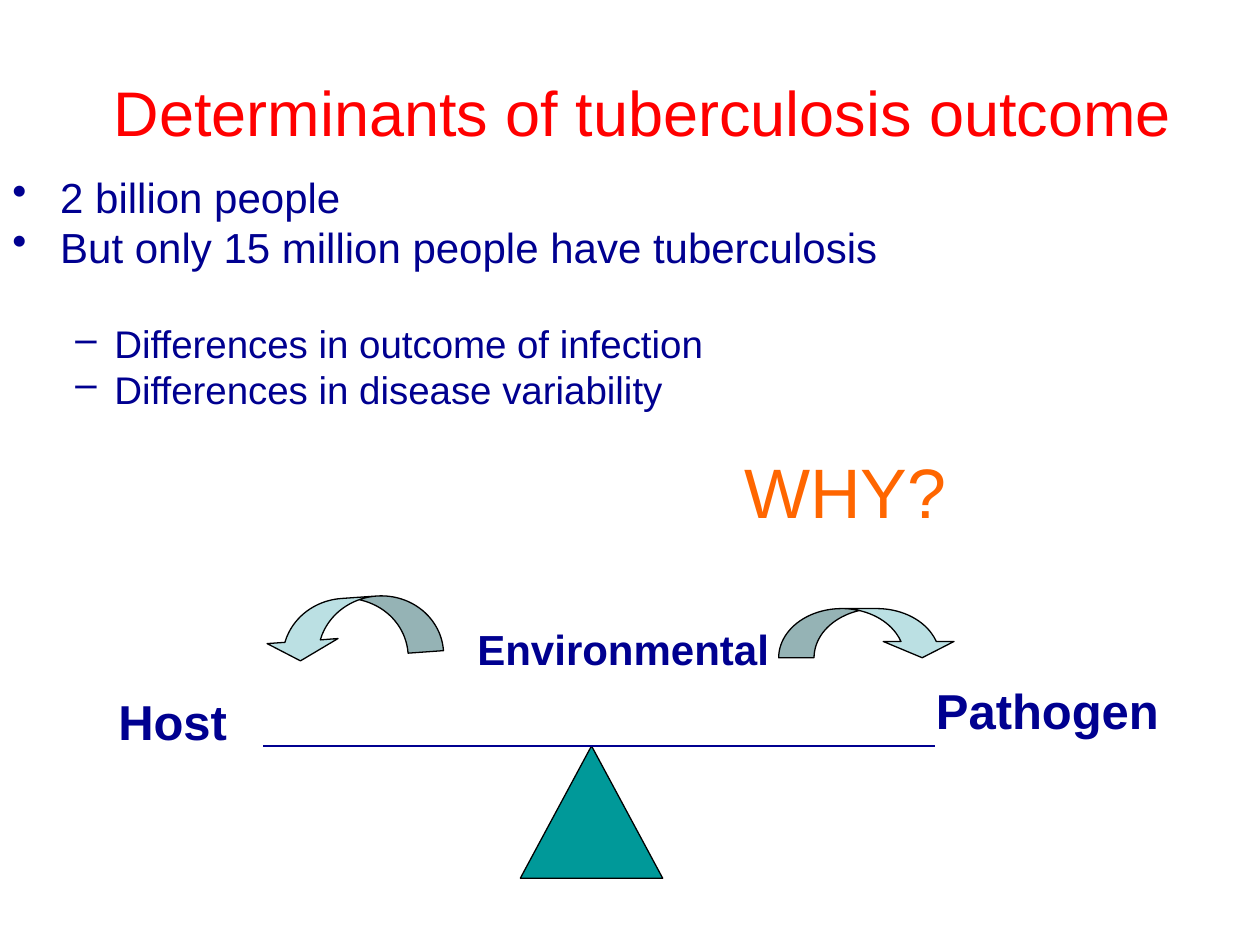
from dataclasses import dataclass
from lxml import etree
from pptx import Presentation
from pptx.dml.color import RGBColor
from pptx.enum.shapes import MSO_CONNECTOR, MSO_SHAPE
from pptx.enum.text import MSO_ANCHOR, PP_ALIGN
from pptx.oxml.ns import qn
from pptx.util import Inches, Pt

LINE = MSO_CONNECTOR.STRAIGHT
TRIANGLE = MSO_SHAPE.ISOSCELES_TRIANGLE
DOWN = MSO_SHAPE.CURVED_DOWN_ARROW
RIGHT = MSO_SHAPE.CURVED_RIGHT_ARROW
MIDDLE = MSO_ANCHOR.MIDDLE
TOP = MSO_ANCHOR.TOP
CENTER = PP_ALIGN.CENTER
LEFT = PP_ALIGN.LEFT

COLORS = {
    "title": "FF0000",
    "text": "000090",
    "why": "FF6600",
    "base": "009999",
    "arrow": "BBE0E3",
    "edge": "000000",
}


@dataclass
class Para:
    text: str
    size: int
    color: str = "text"
    bold: bool = False
    align: PP_ALIGN = LEFT
    margin: float = 0
    hang: float = 0
    bullet: str = ""
    before: float = 0


@dataclass
class Box:
    at: tuple
    paras: list
    anchor: MSO_ANCHOR = TOP
    wrap: bool = True


@dataclass
class Figure:
    kind: MSO_SHAPE
    at: tuple
    fill: str
    adjust: tuple
    turn: float = 0


def color(name: str) -> RGBColor:
    return RGBColor.from_string(COLORS[name])


def add_box(slide, box: Box) -> None:
    frame = slide.shapes.add_textbox(*map(Inches, box.at)).text_frame
    frame.word_wrap = box.wrap
    frame.vertical_anchor = box.anchor
    for i, item in enumerate(box.paras):
        para = frame.add_paragraph() if i else frame.paragraphs[0]
        para.text = item.text
        para.alignment = item.align
        font = para.font
        font.name = "Arial"
        font.size = Pt(item.size)
        font.bold = item.bold
        font.color.rgb = color(item.color)
        props = para._p.get_or_add_pPr()
        props.set("marL", str(Inches(item.margin)))
        props.set("indent", str(Inches(-item.hang)))
        if item.bullet:
            para.line_spacing = 0.8
            para.space_before = Pt(item.before)
            mark = etree.Element(qn("a:buChar"), char=item.bullet)
            props.find(qn("a:spcBef")).addnext(mark)


def add_figure(slide, figure: Figure) -> None:
    shape = slide.shapes.add_shape(figure.kind, *map(Inches, figure.at))
    shape.shadow.inherit = False
    shape.rotation = figure.turn
    shape.fill.solid()
    shape.fill.fore_color.rgb = color(figure.fill)
    shape.line.color.rgb = color("edge")
    shape.line.width = Pt(0.75)
    for i, value in enumerate(figure.adjust):
        shape.adjustments[i] = value


def add_beam(slide, left: float, right: float, top: float) -> None:
    beam = slide.shapes.add_connector(
        LINE, Inches(left), Inches(top), Inches(right), Inches(top))
    beam.line.color.rgb = color("text")
    beam.line.width = Pt(0.75)
    etree.SubElement(beam._element.spPr, qn("a:effectLst"))


def point(text: str) -> Para:
    return Para(text, 24, margin=0.38, hang=0.38, bullet="•", before=5.5)


def detail(text: str, before: float = 5) -> Para:
    return Para(text, 22, margin=0.81, hang=0.31, bullet="–", before=before)


def label(text: str, size: int, at: tuple, wrap: bool = False) -> Box:
    return Box(at, [Para(text, size, bold=True)], wrap=wrap)


BOXES = [
    Box((0.2, 0.21, 9.8, 1.34),
        [Para("Determinants of tuberculosis outcome", 36, "title", align=CENTER)],
        MIDDLE),
    Box((0, 1.39, 10, 2.84), [
        point("2 billion people"),
        point("But only 15 million people have tuberculosis"),
        detail("Differences in outcome of infection", 33),
        detail("Differences in disease variability"),
    ]),
    label("Host", 28, (0.84, 5.44, 1.48, 0.57), True),
    label("Pathogen", 28, (7.33, 5.35, 1.97, 0.57)),
    label("Environmental", 24, (3.69, 4.9, 2.52, 0.5)),
    Box((5.31, 3.51, 2.94, 1.08), [Para("WHY?", 40, "why", margin=0.5)]),
]

FIGURES = [
    Figure(TRIANGLE, (4.13, 5.92, 1.13, 1.05), "base", (0.5,)),
    Figure(DOWN, (6.18, 4.83, 1.42, 0.39), "arrow", (0.72, 1.44, 0.33)),
    Figure(RIGHT, (2.56, 4.27, 0.47, 1.42), "arrow", (0.6, 1.2, 0.33), 85.9),
]


def main() -> None:
    deck = Presentation()
    deck.slide_width = Inches(10)
    deck.slide_height = Inches(7.5)
    slide = deck.slides.add_slide(deck.slide_layouts[6])
    for figure in FIGURES:
        add_figure(slide, figure)
    add_beam(slide, 2.09, 7.42, 5.92)
    for box in BOXES:
        add_box(slide, box)
    deck.save("out.pptx")


if __name__ == "__main__":
    main()
